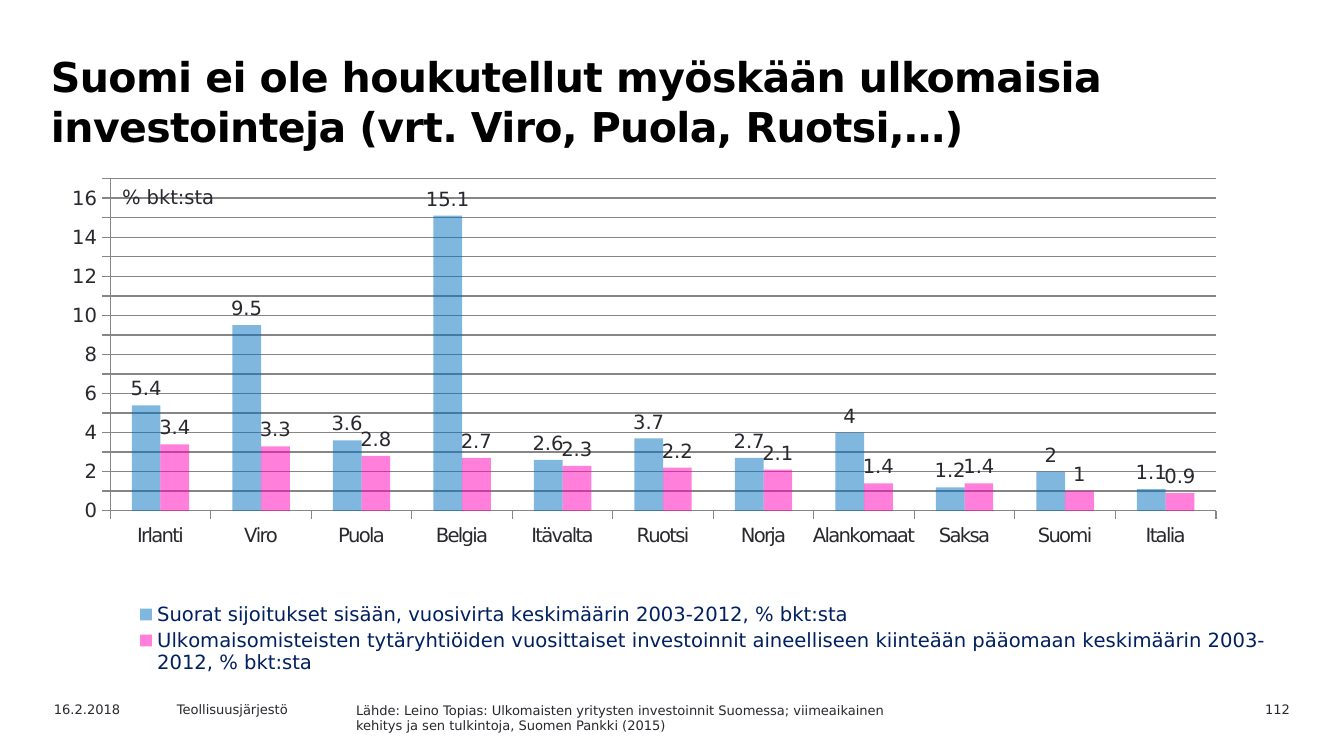
from dataclasses import dataclass

import pptx
import pptx.chart.data
import pptx.dml.color
import pptx.enum.chart
import pptx.enum.text
import pptx.oxml
import pptx.oxml.ns
import pptx.util

EMU_PER_PX = 914400 / 134.4
qn = pptx.oxml.ns.qn


@dataclass(frozen=True)
class Theme:
    font: str = "DejaVu Sans"
    title: str = "000000"
    body: str = "29282E"
    legend: str = "002060"
    grid: str = "868686"
    inflow: str = "0070C0"
    subsidiary: str = "FF00B8"
    title_size: float = 22
    chart_size: float = 10.5
    footer_size: float = 7


def px(n):
    return pptx.util.Emu(round(n * EMU_PER_PX))


def rgb(value):
    return pptx.dml.color.RGBColor.from_string(value)


def set_font(font, name, size, color, bold=False):
    font.name, font.size, font.bold = name, pptx.util.Pt(size), bold
    font.color.rgb = rgb(color)


def write(tf, text, *, name, size, color, bold=False, align="LEFT",
          line=None, spacing=None):
    """Fill a text frame, one paragraph for each line of text."""
    for i, part in enumerate(text.split("\n")):
        p = tf.paragraphs[0] if i == 0 else tf.add_paragraph()
        p.alignment = getattr(pptx.enum.text.PP_ALIGN, align)
        if line:
            p.line_spacing = pptx.util.Pt(line)
        r = p.add_run()
        r.text = part
        set_font(r.font, name, size, color, bold)
        if spacing:
            r.font._element.set("spc", str(spacing))


def set_layout(parent, index, inner=False, **box):
    """Place a plot area or legend by fractions of the chart."""
    for old in parent.findall(qn("c:layout")):
        parent.remove(old)
    target = '<c:layoutTarget val="inner"/>' if inner else ""
    modes = "".join(f'<c:{k}Mode val="edge"/>' for k in "xy")
    sizes = "".join(f'<c:{k} val="{v}"/>' for k, v in box.items())
    parent.insert(index, pptx.oxml.parse_xml(
        f'<c:layout {pptx.oxml.ns.nsdecls("c")}><c:manualLayout>'
        f"{target}{modes}{sizes}</c:manualLayout></c:layout>"))


class SlideBuilder:
    def __init__(self, slide, theme):
        self.s, self.theme = slide, theme

    def text(self, box, text, *, wrap=True, **fmt):
        tf = self.s.shapes.add_textbox(*map(px, box)).text_frame
        tf.word_wrap = wrap
        tf.margin_left = tf.margin_right = px(13)
        tf.margin_top = tf.margin_bottom = px(7)
        write(tf, text, **{"name": self.theme.font, "color": self.theme.body, **fmt})

    def axis(self, axis):
        t = self.theme
        axis.major_tick_mark = pptx.enum.chart.XL_TICK_MARK.OUTSIDE
        axis.minor_tick_mark = pptx.enum.chart.XL_TICK_MARK.NONE
        set_font(axis.tick_labels.font, t.font, t.chart_size, t.body)
        self.rule(axis.format.line)

    def rule(self, line):
        line.color.rgb = rgb(self.theme.grid)
        line.width = pptx.util.Pt(0.75)

    def series(self, series, color):
        t = self.theme
        series.invert_if_negative = False
        fill = series.format.fill
        fill.solid()
        fill.fore_color.rgb = rgb(color)
        clr = series._element.find(qn("c:spPr")).find(".//" + qn("a:srgbClr"))
        clr.append(pptx.oxml.parse_xml(
            f'<a:alpha {pptx.oxml.ns.nsdecls("a")} val="50000"/>'))
        labels = series.data_labels
        labels.show_value = True
        labels.position = pptx.enum.chart.XL_LABEL_POSITION.OUTSIDE_END
        set_font(labels.font, t.font, t.chart_size, t.body)

    def column_chart(self, box, categories, series, colors):
        t = self.theme
        data = pptx.chart.data.CategoryChartData()
        data.categories = categories
        for name, values in series:
            data.add_series(name, values)
        chart = self.s.shapes.add_chart(
            pptx.enum.chart.XL_CHART_TYPE.COLUMN_CLUSTERED,
            *map(px, box), data).chart
        chart.has_title = False
        set_font(chart.font, t.font, t.chart_size, t.body)

        # Columns
        plot = chart.plots[0]
        plot.gap_width, plot.overlap = 150, 0
        plot.vary_by_categories = False
        for item, color in zip(plot.series, colors):
            self.series(item, color)

        # Axes
        values = chart.value_axis
        values.minimum_scale, values.maximum_scale, values.major_unit = 0, 17, 1
        values.has_major_gridlines = True
        self.rule(values.major_gridlines.format.line)
        for axis in (chart.category_axis, values):
            self.axis(axis)
        chart.category_axis.tick_labels.font._element.set("spc", "-90")

        # Legend and plot positions
        chart.has_legend = True
        legend = chart.legend
        legend.position = pptx.enum.chart.XL_LEGEND_POSITION.BOTTOM
        legend.include_in_layout = False
        set_font(legend.font, t.font, t.chart_size, t.legend)
        set_layout(legend._element, 1, x=0.06, y=0.84, w=0.93, h=0.15)
        plot_area = chart._chartSpace.find(".//" + qn("c:plotArea"))
        set_layout(plot_area, 0, inner=True, x=0.044, y=0.03, w=0.896, h=0.639)


CATEGORIES = ["Irlanti", "Viro", "Puola", "Belgia", "Itävalta", "Ruotsi",
              "Norja", "Alankomaat", "Saksa", "Suomi", "Italia"]
SERIES = [
    ("Suorat sijoitukset sisään, vuosivirta keskimäärin 2003-2012, % bkt:sta",
     [5.4, 9.5, 3.6, 15.1, 2.6, 3.7, 2.7, 4, 1.2, 2, 1.1]),
    ("Ulkomaisomisteisten tytäryhtiöiden vuosittaiset investoinnit aineelliseen "
     "kiinteään pääomaan keskimäärin 2003-2012, % bkt:sta",
     [3.4, 3.3, 2.8, 2.7, 2.3, 2.2, 2.1, 1.4, 1.4, 1, 0.9]),
]
FOOTERS = [
    (1177, 126, 24, "112", "RIGHT"),
    (41, 134, 24, "16.2.2018", "LEFT"),
    (164, 191, 24, "Teollisuusjärjestö", "LEFT"),
    (343, 653, 46, "Lähde: Leino Topias: Ulkomaisten yritysten investoinnit "
     "Suomessa; viimeaikainen\nkehitys ja sen tulkintoja, Suomen Pankki (2015)",
     "LEFT"),
]


def main():
    prs = pptx.Presentation()
    prs.slide_width, prs.slide_height = px(1344), px(756)
    theme = Theme()
    sb = SlideBuilder(prs.slides.add_slide(prs.slide_layouts[6]), theme)

    # Title
    sb.text((38, 43, 1175, 95),
            "Suomi ei ole houkutellut myöskään ulkomaisia investointeja "
            "(vrt. Viro, Puola, Ruotsi,…)",
            size=theme.title_size, color=theme.title, bold=True,
            line=27, spacing=-30)

    # Footer
    for left, width, height, text, align in FOOTERS:
        sb.text((left, 695, width, height), text,
                size=theme.footer_size, align=align)

    # Chart and its unit label
    sb.column_chart((56, 163, 1234, 520), CATEGORIES, SERIES,
                    [theme.inflow, theme.subsidiary])
    sb.text((109, 178, 126, 38), "% bkt:sta", size=theme.chart_size, wrap=False)

    prs.save("out.pptx")


if __name__ == "__main__":
    main()
